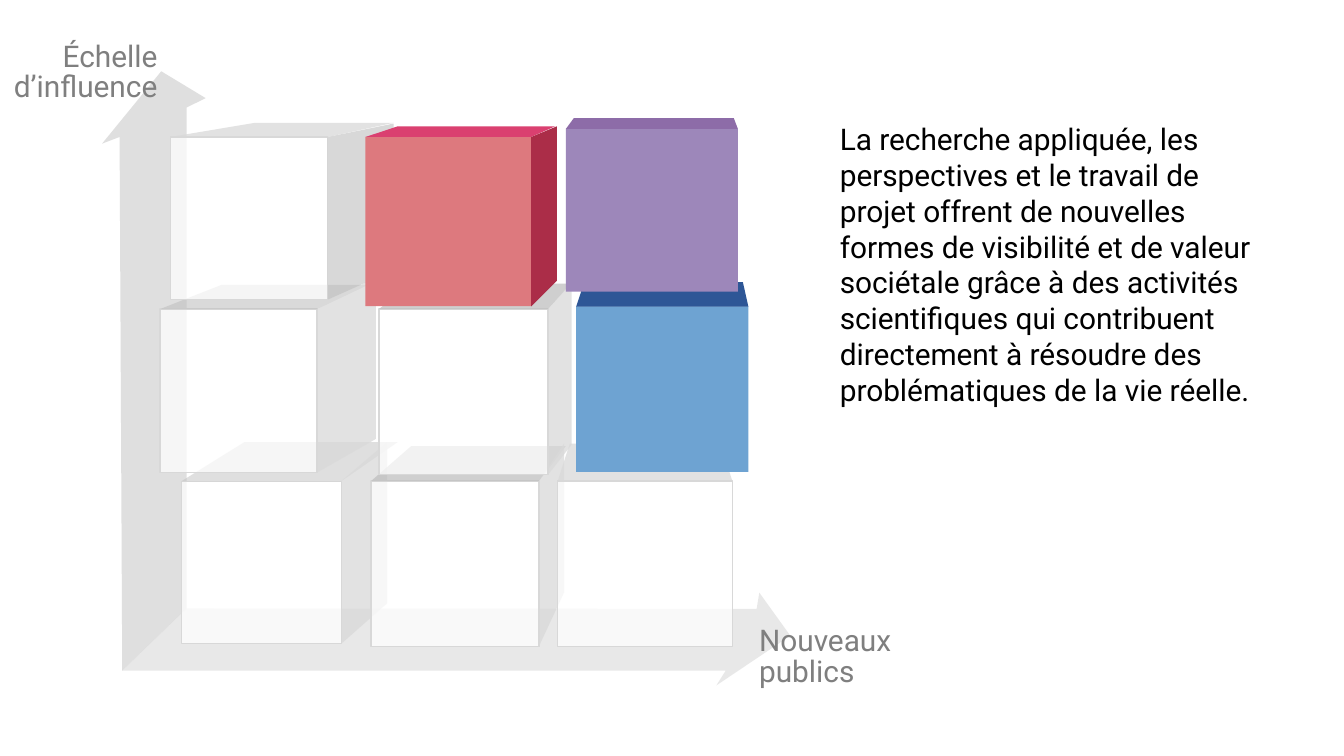
from collections import namedtuple

from lxml import etree
from pptx import Presentation
from pptx.dml.color import RGBColor
from pptx.enum import shapes, text
from pptx.oxml import ns
from pptx.util import Pt


def paint(shape, color, opacity=100, outline=None):
    shape.shadow.inherit = False
    shape.fill.solid()
    shape.fill.fore_color.rgb = RGBColor.from_string(color)
    if opacity < 100:
        fill_color = shape.fill._xPr.find(ns.qn("a:solidFill"))[0]
        etree.SubElement(fill_color, ns.qn("a:alpha")).set("val", str(opacity * 1000))
    if outline:
        shape.line.color.rgb = RGBColor.from_string(outline)
        shape.line.width = Pt(0.75)
    else:
        shape.line.fill.background()


def add_text(content, left, top, width, height, color="7F7F7F",
             align=text.PP_ALIGN.LEFT, spacing=0.85, after=6):
    box = slide.shapes.add_textbox(Pt(left), Pt(top), Pt(width), Pt(height))
    box.text_frame.word_wrap = True
    paragraph = box.text_frame.paragraphs[0]
    paragraph.alignment = align
    paragraph.line_spacing = spacing
    paragraph.space_after = Pt(after)
    run = paragraph.add_run()
    run.text = content
    run.font.name = "Roboto"
    run.font.size = Pt(16)
    run.font.color.rgb = RGBColor.from_string(color)


presentation = Presentation()
presentation.slide_width = Pt(720)
presentation.slide_height = Pt(405)
slide = presentation.slides.add_slide(presentation.slide_layouts[6])

Paint = namedtuple("Paint", "color opacity outline", defaults=(100, None))
Lid = namedtuple("Lid", "left_shift right_shift depth paint")
Side = namedtuple("Side", "shift top_rise bottom_rise paint")
Cube = namedtuple("Cube", "row left width height paint lid side lift", defaults=(None, 0))

GRAY, DARK_GRAY = "D9D9D9", "BFBFBF"
GLASS = Paint("FFFFFF", 74, "D8D8D8")
SHADE, DEEP_SHADE = Paint(GRAY, 75), Paint(DARK_GRAY, 75)
TOP_ROW, MIDDLE_ROW, BOTTOM_ROW = range(3)
FIRST_ROW_TOP, ROW_PITCH = 73.4, 92.2

front_corner = (65.5, 359.3)
back_corner = (100, 326)
influence_head = [(54.7, 77), (86.4, 38.2), (110.2, 52.6)]
influence_shaft = [(100, 57.6), back_corner, front_corner, (64.1, 73.4)]
audience_head = [(383.8, 367.2), (423.4, 340.6), (406.8, 317.5)]
audience_shaft = [(405.4, 326.2), back_corner, front_corner, (388.8, 359.3)]

cubes = [
    Cube(BOTTOM_ROW, 97.2, 85.7, 87.1, GLASS,
         Lid(33.8, 30.2, 21, Paint(DARK_GRAY, 49)), Side(24.5, 20.9, 21.6, SHADE)),
    Cube(BOTTOM_ROW, 198.7, 90, 88.6, GLASS,
         Lid(21.6, 14.4, 18.8, DEEP_SHADE), Side(13.5, 20.2, 28.9, SHADE)),
    Cube(BOTTOM_ROW, 298.8, 93.6, 88.6, GLASS, Lid(6.5, -6.5, 20.2, SHADE)),
    Cube(MIDDLE_ROW, 85.7, 84.2, 87.5, GLASS,
         Lid(33.1, 27.4, 13, Paint(DARK_GRAY, 59)), Side(31.5, 17.3, 18, SHADE)),
    Cube(MIDDLE_ROW, 203, 90.7, 88.6, GLASS,
         Lid(18, 12.3, 13.7, DEEP_SHADE), Side(12.5, 14.4, 15.9, SHADE)),
    Cube(TOP_ROW, 91.4, 84.2, 87.1, GLASS,
         Lid(45.4, 35.4, 7.6, SHADE), Side(35.3, 7.2, 15.8, Paint(DARK_GRAY, 60))),
    Cube(TOP_ROW, 195.8, 88.8, 90.7, Paint("DD797E"),
         Lid(17.3, 12.8, 5.7, Paint("DA4070")), Side(13.7, 5.7, 13.6, Paint("AB2D48"))),
    Cube(MIDDLE_ROW, 308.7, 92.2, 88.6, Paint("6EA3D2"),
         Lid(4.3, -2.9, 13, Paint("2E5696")), lift=1.4),
    Cube(TOP_ROW, 303.1, 92.2, 87.1, Paint("9D87BA"),
         Lid(4.3, -2.2, 5.8, Paint("8D6CA8")), lift=4.3),
]

polygons = [
    (influence_head + influence_shaft, Paint(GRAY, 84)),
    (audience_head + audience_shaft, Paint(GRAY, 60)),
]
for cube in [None] + cubes:
    if cube:
        top = FIRST_ROW_TOP + cube.row * ROW_PITCH - cube.lift
        right, bottom = cube.left + cube.width, top + cube.height
        front = slide.shapes.add_shape(shapes.MSO_SHAPE.RECTANGLE, Pt(cube.left), Pt(top),
                                       Pt(cube.width), Pt(cube.height))
        paint(front, *cube.paint)

        lid, side = cube.lid, cube.side
        back = top - lid.depth
        polygons = [([(cube.left, top), (right, top), (right + lid.right_shift, back),
                      (cube.left + lid.left_shift, back)], lid.paint)]
        if side:
            outer = right + side.shift
            polygons.append(([(right, top), (right, bottom), (outer, bottom - side.bottom_rise),
                              (outer, top - side.top_rise)], side.paint))

    for corners, style in polygons:
        points = [(Pt(x), Pt(y)) for x, y in corners]
        builder = slide.shapes.build_freeform(*points[0], scale=1.0)
        builder.add_line_segments(points[1:], close=True)
        paint(builder.convert_to_shape(), *style)

add_text("La recherche appliquée, les perspectives et le travail de projet offrent de "
         "nouvelles formes de visibilité et de valeur sociétale grâce à des activités "
         "scientifiques qui contribuent directement à résoudre des problématiques de la "
         "vie réelle.", 442.8, 61.2, 251.3, 236.2, color="000000", spacing=1.0, after=9)
add_text("Nouveaux publics", 399.6, 332.6, 97.2, 40.3)
add_text("Échelle d’influence", -5.8, 19.4, 97.2, 40.3, align=text.PP_ALIGN.RIGHT)

presentation.save("out.pptx")
